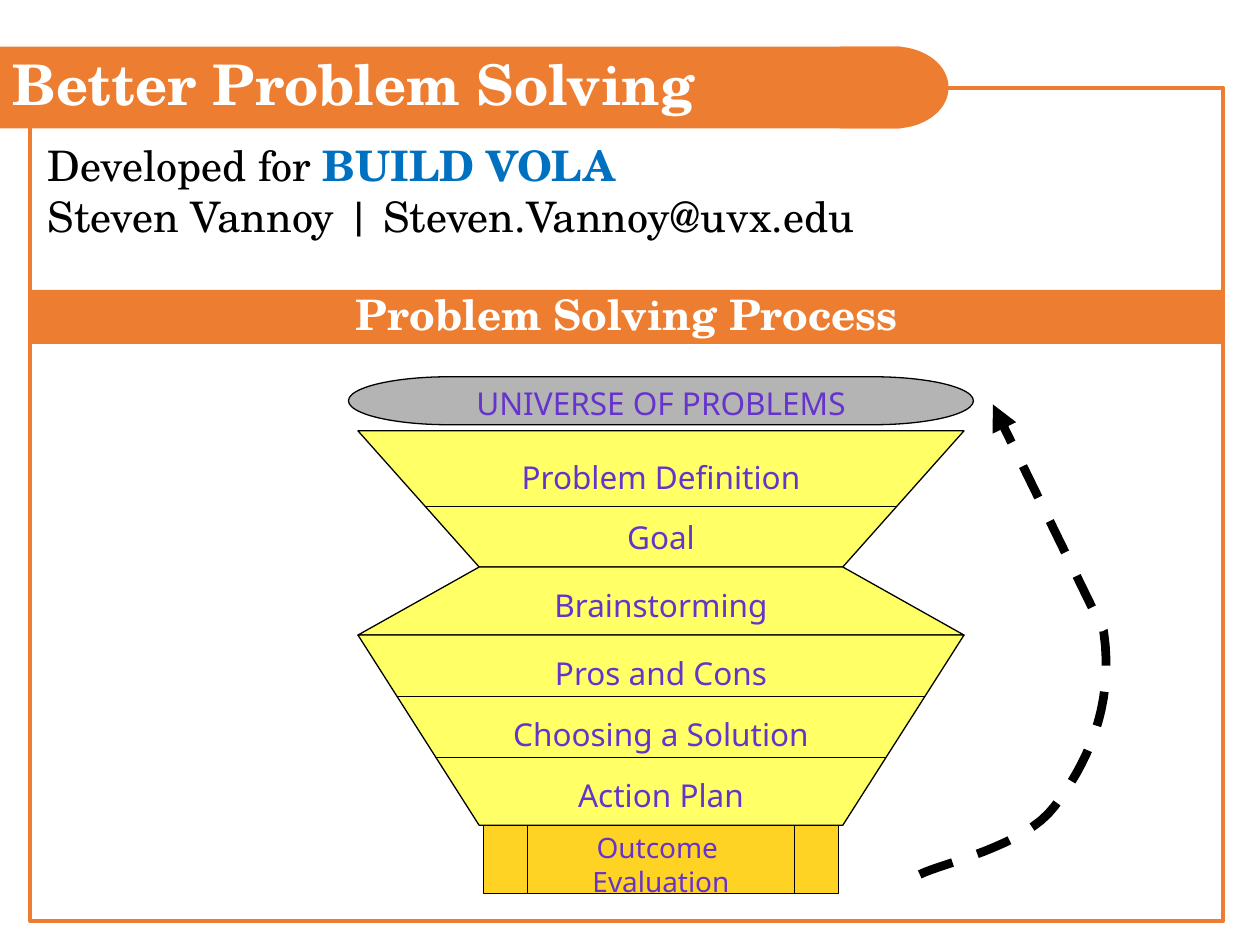
from dataclasses import dataclass
from typing import NamedTuple

from lxml.etree import SubElement
from pptx import Presentation
from pptx.dml.color import RGBColor as RGB
from pptx.enum.dml import MSO_LINE as Dash
from pptx.enum.shapes import MSO_CONNECTOR as Link, MSO_SHAPE as Kind
from pptx.enum.text import MSO_ANCHOR as Anchor, MSO_AUTO_SIZE as Fit, PP_ALIGN as Align
from pptx.oxml.ns import qn
from pptx.util import Pt


@dataclass(frozen=True)
class Theme:
    serif: str = "TeX Gyre Schola"
    sans: str = "Noto Sans"
    orange: str = "ED7D31"
    white: str = "FFFFFF"
    black: str = "000000"
    blue: str = "0070C0"
    purple: str = "6633CC"
    yellow: str = "FFFF66"
    gold: str = "FFCC00"
    gray: str = "B4B4B4"
    title: float = 32
    body: float = 24
    label: float = 18
    small: float = 16
    thin: float = 0.75
    frame: float = 2.25
    thick: float = 5


class Box(NamedTuple):
    x: float
    y: float
    w: float
    h: float


class Block(NamedTuple):
    kind: Kind
    box: Box
    fill: str
    turn: float = 0


class Label(NamedTuple):
    lines: tuple[str, ...]
    box: Box
    size: float


class Rule(NamedTuple):
    x: float
    y: float
    end: float


T = Theme()
MID = 377.7


def center(w: float, y: float, h: float) -> Box:
    return Box(MID - w / 2, y, w, h)


def place(shape, box: Box) -> None:
    shape.left, shape.top, shape.width, shape.height = map(Pt, box)


def paint(shape, fill: str | None, line: str | None = None, width: float = T.thin) -> None:
    if fill:
        shape.fill.solid()
        shape.fill.fore_color.rgb = RGB.from_string(fill)
    else:
        shape.fill.background()
    if line:
        shape.line.color.rgb = RGB.from_string(line)
        shape.line.width = Pt(width)
    else:
        shape.line.fill.background()


def write(par, text: str, size: float, color: str, face: str, bold: bool = False) -> None:
    run = par.add_run()
    run.text = text
    font = run.font
    font.size, font.name, font.bold = Pt(size), face, bold
    font.color.rgb = RGB.from_string(color)


def add_block(shapes, block: Block, line: str | None = T.black, width: float = T.thin):
    shape = shapes.add_shape(block.kind, *map(Pt, block.box))
    shape.shadow.inherit = False
    shape.rotation = block.turn
    paint(shape, block.fill, line, width)
    return shape


def add_label(shapes, label: Label) -> None:
    frame = shapes.add_textbox(*map(Pt, label.box)).text_frame
    frame.word_wrap = True
    frame.margin_left = frame.margin_right = Pt(3)
    frame.margin_top = frame.margin_bottom = Pt(3)
    for i, text in enumerate(label.lines):
        par = frame.add_paragraph() if i else frame.paragraphs[0]
        par.alignment = Align.CENTER
        write(par, text, label.size, T.purple, T.sans)


def add_rule(shapes, rule: Rule) -> None:
    line = shapes.add_connector(Link.STRAIGHT, *map(Pt, (rule.x, rule.y, rule.end, rule.y)))
    line.line.color.rgb = RGB.from_string(T.black)
    line.line.width = Pt(T.thin)
    SubElement(line._element.spPr, qn("a:effectLst"))


def curve(pts: tuple, steps: int = 16) -> list[tuple[int, int]]:
    def at(t: float, axis: int) -> int:
        u = 1 - t
        a, b, c, d = (p[axis] for p in pts)
        return Pt(u**3 * a + 3 * u * u * t * b + 3 * u * t * t * c + t**3 * d)

    return [(at(i / steps, 0), at(i / steps, 1)) for i in range(1, steps + 1)]


def add_loop(shapes) -> None:
    start, turn, peak = (525.6, 499.7), (602.6, 460.8), (630.7, 360.7)
    path = shapes.build_freeform(*map(Pt, start))
    path.add_line_segments(
        curve((start, (538.6, 493.2), (585.4, 483.8), turn))
        + curve((turn, (619.9, 437.8), (637.2, 405.4), peak))
        + [(Pt(567.4), Pt(231.1))],
        close=False,
    )
    loop = path.convert_to_shape()
    loop.shadow.inherit = False
    paint(loop, None, T.black, T.thick)
    loop.line.dash_style = Dash.DASH
    SubElement(loop.line._get_or_add_ln(), qn("a:tailEnd"), type="triangle")


def fill_body(body) -> None:
    place(body, Box(20.2, 76.3, 689.8, 77.8))
    frame = body.text_frame
    frame.auto_size = Fit.NONE
    rows = (
        (("Developed for ", T.black, False), ("BUILD VOLA", T.blue, True)),
        (("Steven Vannoy | Steven.Vannoy@uvx.edu", T.black, False),),
    )
    for i, row in enumerate(rows):
        par = frame.add_paragraph() if i else frame.paragraphs[0]
        par.space_before = Pt(0)
        props = par._p.get_or_add_pPr()
        props.set("marL", str(Pt(18)))
        props.set("indent", str(Pt(-18)))
        SubElement(props, qn("a:buNone"))
        for text, color, bold in row:
            write(par, text, T.body, color, T.serif, bold)


def fill_bar(bar, text: str, size: float, align: Align) -> None:
    frame = bar.text_frame
    frame.auto_size = Fit.NONE
    frame.vertical_anchor = Anchor.MIDDLE
    par = frame.paragraphs[0]
    par.alignment = align
    par.line_spacing = 0.9
    write(par, text, size, T.white, T.serif, True)


def main() -> None:
    deck = Presentation()
    deck.slide_width, deck.slide_height = Pt(720), Pt(540)
    slide = deck.slides.add_slide(deck.slide_layouts[1])
    shapes = slide.shapes
    fill_body(slide.placeholders[1])

    funnel = Kind.FLOWCHART_MANUAL_OPERATION
    for block in (
        Block(funnel, center(346.3, 246.2, 77.8), T.yellow),
        Block(funnel, center(346.3, 324, 38.9), T.yellow, 180),
        Block(funnel, center(346.3, 362.9, 108.7), T.yellow),
        Block(Kind.FLOWCHART_TERMINATOR, center(357.1, 215.3, 27.4), T.gray),
    ):
        add_block(shapes, block)
    base = add_block(shapes, Block(Kind.FLOWCHART_PREDEFINED_PROCESS, center(203, 471.6, 38.9), T.gold))
    tint = base.fill._xPr.find(".//" + qn("a:srgbClr"))
    SubElement(tint, qn("a:alpha"), val="86000")

    for text, y in (
        ("UNIVERSE OF PROBLEMS", 216.7),
        ("Problem Definition", 258.5),
        ("Goal", 293),
        ("Brainstorming", 331.9),
        ("Pros and Cons", 370.8),
        ("Choosing a Solution", 405.4),
        ("Action Plan", 440.6),
    ):
        add_label(shapes, Label((text,), center(334.8, y, 23), T.label))
    add_label(shapes, Label(("Outcome ", "Evaluation"), center(159.1, 471.6, 38.9), T.small))

    for rule in (Rule(248.4, 432.7, 506.2), Rule(226.8, 398.2, 528.5), Rule(243.4, 289.4, 511.9)):
        add_rule(shapes, rule)
    add_loop(shapes)

    add_block(shapes, Block(Kind.RECTANGLE, Box(17.3, 50.4, 681.8, 475.9), None), T.orange, T.frame)
    add_block(shapes, Block(Kind.FLOWCHART_DELAY, Box(480.2, 26.6, 61.9, 46.8), T.orange), None)
    title = shapes.title
    place(title, Box(0, 26.6, 514.8, 46.8))
    paint(title, T.orange)
    fill_bar(title, "Better Problem Solving", T.title, Align.LEFT)
    shapes._spTree.append(title._element)
    band = add_block(shapes, Block(Kind.RECTANGLE, Box(17.3, 165.6, 681.8, 31), T.orange), None)
    fill_bar(band, "Problem Solving Process", T.body, Align.CENTER)
    deck.save("out.pptx")


if __name__ == "__main__":
    main()
